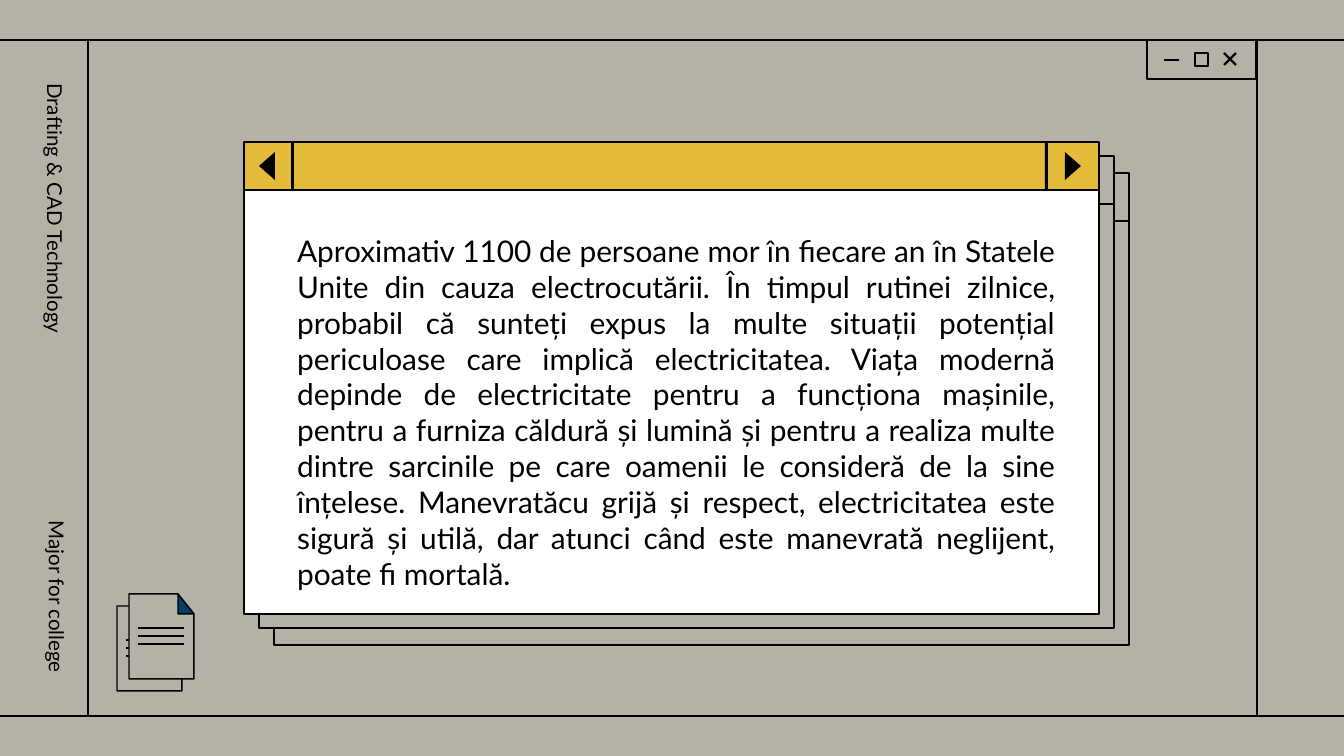
import pptx
import pptx.dml.color
import pptx.enum.shapes
import pptx.enum.text
import pptx.oxml.ns
import pptx.util
from lxml import etree

# Content
BODY = (
    "Aproximativ 1100 de persoane mor în fiecare an în Statele Unite din cauza "
    "electrocutării. În timpul rutinei zilnice, probabil că sunteți expus la multe "
    "situații potențial periculoase care implică electricitatea. Viața modernă depinde "
    "de electricitate pentru a funcționa mașinile, pentru a furniza căldură și lumină "
    "și pentru a realiza multe dintre sarcinile pe care oamenii le consideră de la sine "
    "înțelese. Manevratăcu grijă și respect, electricitatea este sigură și utilă, dar "
    "atunci când este manevrată neglijent, poate fi mortală."
)
TOPIC = "Drafting & CAD Technology"
MAJOR = "Major for college"
INK = {"black": "000000", "paper": "B5B1A7", "white": "FFFFFF",
       "gold": "E4BA3A", "blue": "023D6F"}

# Left, top, body fill, header fill, colour of bars and arrows
PANES = [
    (274, 173, None, None, None),
    (259, 156, "paper", "paper", "paper"),
    (244, 142, "white", "gold", "black"),
]
WIDE, HEAD, DEEP = 855, 48, 424

# Left, top, colour of the folded corner
PAGES = [(117, 606, "gold"), (129, 594, "blue")]

# Page frame: x1, y1, x2, y2
FRAME = [(-4, 40, 1348, 40), (88, 716, 88, 40),
         (1257, 716, 1257, 40), (-4, 716, 1348, 716)]

SCALE = 914400 / 134.4
ALIGN = pptx.enum.text.PP_ALIGN
RECT = pptx.enum.shapes.MSO_SHAPE.RECTANGLE
LINK = pptx.enum.shapes.MSO_CONNECTOR.STRAIGHT


def px(n):
    return pptx.util.Emu(round(n * SCALE))


def rgb(name):
    return pptx.dml.color.RGBColor.from_string(INK[name])


def paint(shape, fill, line):
    shape.shadow.inherit = False
    if fill:
        shape.fill.solid()
        shape.fill.fore_color.rgb = rgb(fill)
    else:
        shape.fill.background()
    if line:
        shape.line.color.rgb = rgb("black")
        shape.line.width = pptx.util.Pt(line)
    else:
        shape.line.fill.background()


def box(x, y, w, h, fill=None, line=0.75):
    paint(shapes.add_shape(RECT, px(x), px(y), px(w), px(h)), fill, line)


def poly(x, y, dots, fill, line=0.75):
    pen = shapes.build_freeform(*dots[0], scale=SCALE)
    pen.add_line_segments(dots[1:], close=True)
    paint(pen.convert_to_shape(px(x), px(y)), fill, line)


def rule(x1, y1, x2, y2, width=0.75):
    link = shapes.add_connector(LINK, px(x1), px(y1), px(x2), px(y2))
    link.line.color.rgb = rgb("black")
    link.line.width = pptx.util.Pt(width)
    etree.SubElement(link.element.spPr, pptx.oxml.ns.qn("a:effectLst"))


def text(words, x, y, w, h, size=11, align=ALIGN.LEFT, turn=0, space=1.0):
    item = shapes.add_textbox(px(x), px(y), px(w), px(h))
    item.rotation = turn
    frame = item.text_frame
    frame.word_wrap = True
    frame.vertical_anchor = pptx.enum.text.MSO_ANCHOR.MIDDLE
    frame.margin_left = frame.margin_right = pptx.util.Inches(0.1)
    frame.margin_top = frame.margin_bottom = pptx.util.Inches(0.1)
    para = frame.paragraphs[0]
    para.alignment = align
    para.line_spacing = space
    run = para.add_run()
    run.text = words
    run.font.name = "Lato"
    run.font.size = pptx.util.Pt(size)
    run.font.color.rgb = rgb("black")


deck = pptx.Presentation()
deck.slide_width, deck.slide_height = px(1344), px(756)
slide = deck.slides.add_slide(deck.slide_layouts[6])
slide.background.fill.solid()
slide.background.fill.fore_color.rgb = rgb("paper")
shapes = slide.shapes

# Window buttons
box(1147, 40, 109, 39, "paper")
rule(1164, 60, 1179, 60, 1.25)
box(1195, 53, 13, 13, line=1.25)
rule(1224, 53, 1236, 65, 1.25)
rule(1224, 65, 1236, 53, 1.25)

# Page frame
for ends in FRAME:
    rule(*ends)

# Stacked panes
for x, y, body, head, mark in PANES:
    box(x, y + HEAD, WIDE, DEEP, body)
    box(x, y, WIDE, HEAD, head)
    if mark:
        for left in (47, 801):
            box(x + left, y, 3, HEAD, mark, line=None)
        poly(x, y, [(31, 10), (15, 24), (31, 38)], mark, line=None)
        poly(x, y, [(821, 10), (821, 38), (837, 24)], mark, line=None)

# Texts
text(BODY, 284, 233, 785, 358, size=16, align=ALIGN.JUSTIFY)
text(TOPIC, -99, 211, 312, 30, turn=90, space=1.15)
text(MAJOR, -82, 532, 278, 30, turn=90, align=ALIGN.RIGHT)

# Page icons
for x, y, fold in PAGES:
    poly(x, y, [(0, 0), (0, 85), (65, 85), (65, 20), (49, 0)], "paper")
    poly(x, y, [(49, 0), (49, 20), (65, 20)], fold)
    for row in range(3):
        level = y + 34 + 8 * row
        rule(x + 9, level, x + 55, level)

deck.save("out.pptx")
